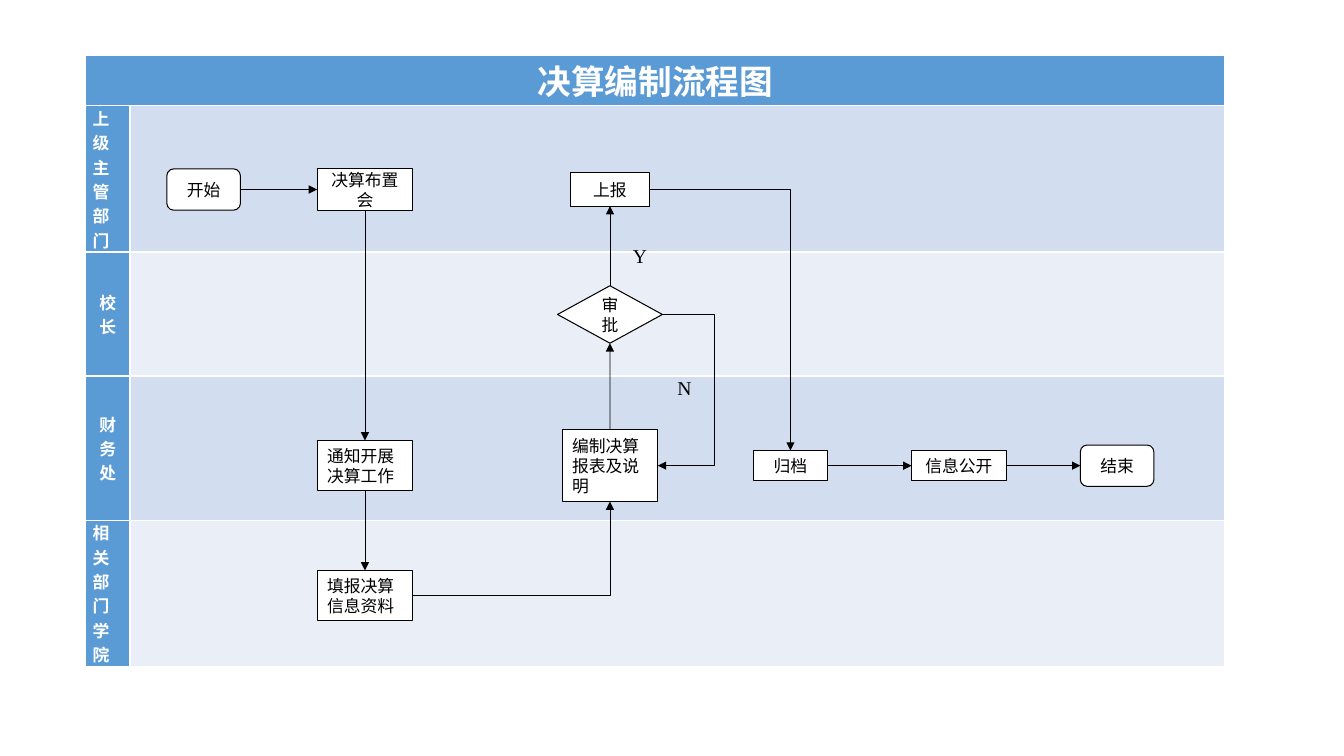
from dataclasses import dataclass

from lxml import etree
from pptx import Presentation
from pptx.dml.color import RGBColor
from pptx.enum.shapes import MSO_CONNECTOR, MSO_SHAPE
from pptx.enum.text import MSO_ANCHOR, PP_ALIGN
from pptx.oxml.ns import qn
from pptx.util import Inches, Pt

LEFT, CENTER, JUSTIFY = PP_ALIGN.LEFT, PP_ALIGN.CENTER, PP_ALIGN.JUSTIFY
MIDDLE = MSO_ANCHOR.MIDDLE
RECT, DIAMOND = MSO_SHAPE.RECTANGLE, MSO_SHAPE.DIAMOND
TERMINAL = MSO_SHAPE.FLOWCHART_ALTERNATE_PROCESS
STRAIGHT, ELBOW = MSO_CONNECTOR.STRAIGHT, MSO_CONNECTOR.ELBOW
TOP_SITE, LEFT_SITE, BOTTOM_SITE, RIGHT_SITE = range(4)


@dataclass(frozen=True)
class Theme:
    header: RGBColor = RGBColor(0x5B, 0x9B, 0xD5)
    bands: tuple = (RGBColor(0xD2, 0xDE, 0xEF), RGBColor(0xEA, 0xEF, 0xF7))
    white: RGBColor = RGBColor(255, 255, 255)
    black: RGBColor = RGBColor(0, 0, 0)
    sans: str = "Calibri"
    serif: str = "Times New Roman"
    title: Pt = Pt(24)
    label: Pt = Pt(12)
    branch: Pt = Pt(14)
    outline: Pt = Pt(0.75)
    thin: Pt = Pt(0.5)


THEME = Theme()
CHART_BOX = (0.85, 0.55, 11.3, 5.87)
TITLE_HEIGHT, LABEL_WIDTH = 0.5, 0.44

LANES = [  # name, height, alignment
    ("上级主管部门", 1.39, JUSTIFY),
    ("校长", 1.23, CENTER),
    ("财务处", 1.43, CENTER),
    ("相关部门学院", 1.32, JUSTIFY),
]

# Centre lines of the steps, measured from the chart's corner
COL_START, COL_NOTICE, COL_REPORT, COL_ARCHIVE, COL_PUBLISH, COL_END = (
    1.17, 2.77, 5.2, 6.99, 8.66, 10.23)
ROW_SUPERIOR, ROW_PRINCIPAL, ROW_FINANCE, ROW_DEPARTMENT = 1.33, 2.57, 4.07, 5.36

STEPS = {  # name: text, shape, centre x, centre y, width, height, alignment, font
    "start": ("开始", TERMINAL, COL_START, ROW_SUPERIOR, 0.73, 0.41, CENTER, THEME.serif),
    "meeting": ("决算布置会", RECT, COL_NOTICE, ROW_SUPERIOR, 0.95, 0.42, CENTER, THEME.serif),
    "notice": ("通知开展决算工作", RECT, COL_NOTICE, ROW_FINANCE, 0.95, 0.5, LEFT, THEME.serif),
    "fill_in": ("填报决算信息资料", RECT, COL_NOTICE, ROW_DEPARTMENT, 0.95, 0.5, LEFT, THEME.serif),
    "compile": ("编制决算报表及说明", RECT, COL_REPORT, ROW_FINANCE, 0.95, 0.71, LEFT, THEME.serif),
    "approve": ("审批", DIAMOND, COL_REPORT, ROW_PRINCIPAL, 1.04, 0.57, CENTER, THEME.serif),
    "submit": ("上报", RECT, COL_REPORT, ROW_SUPERIOR, 0.79, 0.33, CENTER, THEME.serif),
    "archive": ("归档", RECT, COL_ARCHIVE, ROW_FINANCE, 0.74, 0.3, CENTER, THEME.sans),
    "publish": ("信息公开", RECT, COL_PUBLISH, ROW_FINANCE, 0.94, 0.3, CENTER, THEME.serif),
    "end": ("结束", TERMINAL, COL_END, ROW_FINANCE, 0.73, 0.41, CENTER, THEME.serif),
}

STRAIGHT_FLOWS = [  # from, site, to, site, line width
    ("start", RIGHT_SITE, "meeting", LEFT_SITE, THEME.outline),
    ("meeting", BOTTOM_SITE, "notice", TOP_SITE, THEME.thin),
    ("notice", BOTTOM_SITE, "fill_in", TOP_SITE, THEME.thin),
    ("compile", TOP_SITE, "approve", BOTTOM_SITE, THEME.thin),
    ("approve", TOP_SITE, "submit", BOTTOM_SITE, THEME.thin),
    ("archive", RIGHT_SITE, "publish", LEFT_SITE, THEME.outline),
    ("publish", RIGHT_SITE, "end", LEFT_SITE, THEME.outline),
]
CORNER_FLOWS = [
    ("fill_in", RIGHT_SITE, "compile", BOTTOM_SITE, THEME.thin),
    ("submit", RIGHT_SITE, "archive", TOP_SITE, THEME.thin),
]
REJECT_FLOW = ("approve", RIGHT_SITE, "compile", RIGHT_SITE, THEME.thin)
REJECT_X = 6.24
BRANCHES = [("Y", 5.33, 1.82), ("N", 5.77, 3.13)]


def write(tf, text, align, color, **font):
    p = tf.paragraphs[0]
    p.alignment = align
    r = p.add_run()
    r.text = text
    r.font.color.rgb = color
    for name, value in font.items():
        setattr(r.font, name, value)


def fill_cell(cell, color):
    cell.fill.solid()
    cell.fill.fore_color.rgb = color
    margins = {"margin_left": 0.07, "margin_right": 0.07, "margin_top": 0, "margin_bottom": 0}
    for name, value in margins.items():
        setattr(cell, name, Inches(value))


def add_lanes(slide, box):
    table = slide.shapes.add_table(len(LANES) + 1, 2, *map(Inches, box)).table
    table.first_col = True
    table.columns[0].width = Inches(LABEL_WIDTH)
    table.columns[1].width = Inches(box[2] - LABEL_WIDTH)
    table.rows[0].height = Inches(TITLE_HEIGHT)
    title = table.cell(0, 0)
    title.merge(table.cell(0, 1))
    fill_cell(title, THEME.header)
    write(title.text_frame, "决算编制流程图", CENTER, THEME.white,
          size=THEME.title, name=THEME.sans, bold=True)
    for i, (name, height, align) in enumerate(LANES):
        table.rows[i + 1].height = Inches(height)
        label, lane = table.cell(i + 1, 0), table.cell(i + 1, 1)
        fill_cell(label, THEME.header)
        fill_cell(lane, THEME.bands[i % 2])
        label.vertical_anchor = MIDDLE
        label._tc.get_or_add_tcPr().set("vert", "eaVert")
        write(label.text_frame, name, align, THEME.white,
              size=THEME.label, name=THEME.sans, bold=True)


def add_step(slide, box, text, kind, x, y, w, h, align, font):
    left, top = box[0] + x - w / 2, box[1] + y - h / 2
    sp = slide.shapes.add_shape(kind, *map(Inches, (left, top, w, h)))
    sp.shadow.inherit = False
    sp.fill.solid()
    sp.fill.fore_color.rgb = THEME.white
    sp.line.color.rgb = THEME.black
    sp.line.width = THEME.outline
    tf = sp.text_frame
    tf.word_wrap = True
    tf.vertical_anchor = MIDDLE
    write(tf, text, align, THEME.black, size=THEME.label, name=font)
    return sp


def add_flow(slide, steps, kind, source, source_site, target, target_site, width):
    line = slide.shapes.add_connector(kind, 0, 0, 0, 0)
    line.begin_connect(steps[source], source_site)
    line.end_connect(steps[target], target_site)
    line.line.color.rgb = THEME.black
    line.line.width = width
    etree.SubElement(line.line._get_or_add_ln(), qn("a:tailEnd"), type="triangle")
    etree.SubElement(line._element.spPr, qn("a:effectLst"))
    return line


def add_steps(slide, box):
    steps = {name: add_step(slide, box, *step) for name, step in STEPS.items()}
    for flow in STRAIGHT_FLOWS:
        add_flow(slide, steps, STRAIGHT, *flow)
    for flow in CORNER_FLOWS:
        line = add_flow(slide, steps, ELBOW, *flow)
        line._element.spPr.find(qn("a:prstGeom")).set("prst", "bentConnector2")

    line = add_flow(slide, steps, ELBOW, *REJECT_FLOW)
    bend = (Inches(box[0] + REJECT_X) - line.begin_x) / (line.end_x - line.begin_x)
    guides = line._element.spPr.find(qn("a:prstGeom")).get_or_add_avLst()
    etree.SubElement(guides, qn("a:gd"), name="adj1", fmla=f"val {round(bend * 100000)}")

    for text, x, y in BRANCHES:
        sp = slide.shapes.add_textbox(*map(Inches, (box[0] + x, box[1] + y, 0.26, 0.34)))
        sp.text_frame.word_wrap = True
        write(sp.text_frame, text, LEFT, THEME.black, size=THEME.branch, name=THEME.serif)


def main():
    prs = Presentation()
    prs.slide_width, prs.slide_height = Inches(13.33), Inches(7.5)
    slide = prs.slides.add_slide(prs.slide_layouts[6])
    add_lanes(slide, CHART_BOX)
    add_steps(slide, CHART_BOX)
    prs.save("out.pptx")


if __name__ == "__main__":
    main()
